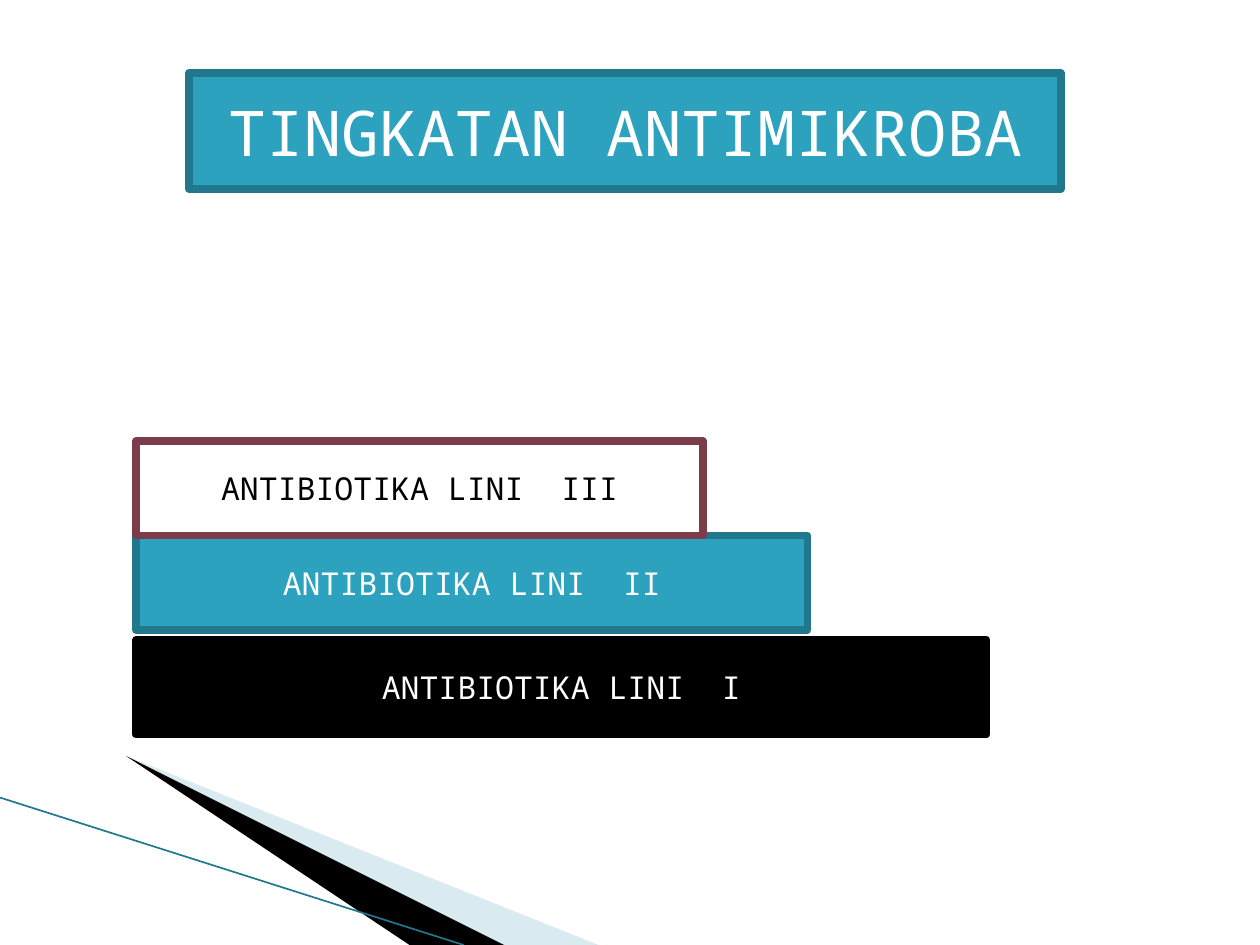
import pptx
import pptx.util
import pptx.dml.color
import pptx.enum.shapes
import pptx.enum.text
import pptx.oxml.ns
import pptx.oxml.xmlchemy

Inches = pptx.util.Inches
FONT = "Noto Sans Mono"
HUES = {
    "teal": "2DA2BF",
    "edge": "21788D",
    "wine": "7D3C4A",
    "pale": "A0CBDC",
    "black": "000000",
    "white": "FFFFFF",
}


def rgb(name):
    return pptx.dml.color.RGBColor.from_string(HUES[name])


def add(props, tag, **attrs):
    node = pptx.oxml.xmlchemy.OxmlElement(tag)
    for key, value in attrs.items():
        node.set(key, value)
    props.append(node)


def write(shape, text, size=18, hue="white"):
    frame = shape.text_frame
    frame.word_wrap = True
    frame.vertical_anchor = pptx.enum.text.MSO_ANCHOR.MIDDLE
    para = frame.paragraphs[0]
    para.alignment = pptx.enum.text.PP_ALIGN.CENTER
    run = para.add_run()
    run.text = text
    run.font.name = FONT
    run.font.size = pptx.util.Pt(size)
    run.font.color.rgb = rgb(hue)


def panel(slide, box, text, fill="teal", edge="edge", **style):
    rect = pptx.enum.shapes.MSO_SHAPE.RECTANGLE
    shape = slide.shapes.add_shape(rect, *map(Inches, box))
    shape.shadow.inherit = False
    shape.fill.solid()
    shape.fill.fore_color.rgb = rgb(fill)
    shape.line.color.rgb = rgb(edge)
    shape.line.width = pptx.util.Pt(4.33)
    # Rounded outline corners
    add(shape.element.spPr.find(pptx.oxml.ns.qn("a:ln")), "a:round")
    write(shape, text, **style)


def wedge(slide, box, points, fill, alpha=None):
    left, top = box[:2]
    spots = [(left + x, top + y) for x, y in points]
    build = slide.shapes.build_freeform(*spots[0], scale=Inches(1))
    build.add_line_segments(spots[1:], close=True)
    shape = build.convert_to_shape()
    shape.shadow.inherit = False
    shape.fill.solid()
    shape.fill.fore_color.rgb = rgb(fill)
    shape.line.fill.background()
    if alpha:
        tag = pptx.oxml.ns.qn("a:srgbClr")
        color = next(shape.element.spPr.iter(tag))
        add(color, "a:alpha", val=str(alpha * 1000))


def corner(slide, box):
    """Two wedges and a thin line sweeping from the left edge."""
    left, top, width, height = box
    wedge(slide, box, [(0.55, 0.17), (width, height), (4.56, height)],
          "pale", alpha=40)
    wedge(slide, box, [(0.53, 0.16), (4.55, height), (3.7, height)], "black")
    line = slide.shapes.add_connector(
        pptx.enum.shapes.MSO_CONNECTOR.STRAIGHT,
        Inches(left), Inches(top), Inches(left + 3.68), Inches(top + height))
    line.line.color.rgb = rgb("edge")
    line.line.width = pptx.util.Pt(0.95)
    add(line.element.spPr, "a:effectLst")


def steps(slide, box):
    """Bars sharing a left edge, drawn from the widest up."""
    left, top, width, height = box
    tall = 0.75
    bars = [
        ("I", width, height - tall, "black", "black", "white"),
        ("II", 5.33, tall, "teal", "edge", "white"),
        ("III", 4.5, 0, "white", "wine", "black"),
    ]
    for line, wide, down, fill, edge, hue in bars:
        panel(slide, (left, top + down, wide, tall),
              f"ANTIBIOTIKA LINI  {line}", fill, edge, hue=hue)


def main():
    deck = pptx.Presentation()
    deck.slide_width, deck.slide_height = Inches(10), Inches(7.5)
    slide = deck.slides.add_slide(deck.slide_layouts[6])
    corner(slide, (0, 6.33, 5.9, 1.17))
    steps(slide, (1.08, 3.5, 6.75, 2.33))
    # Title
    panel(slide, (1.5, 0.58, 6.92, 0.92), "TINGKATAN ANTIMIKROBA", size=36)
    deck.save("out.pptx")


if __name__ == "__main__":
    main()
